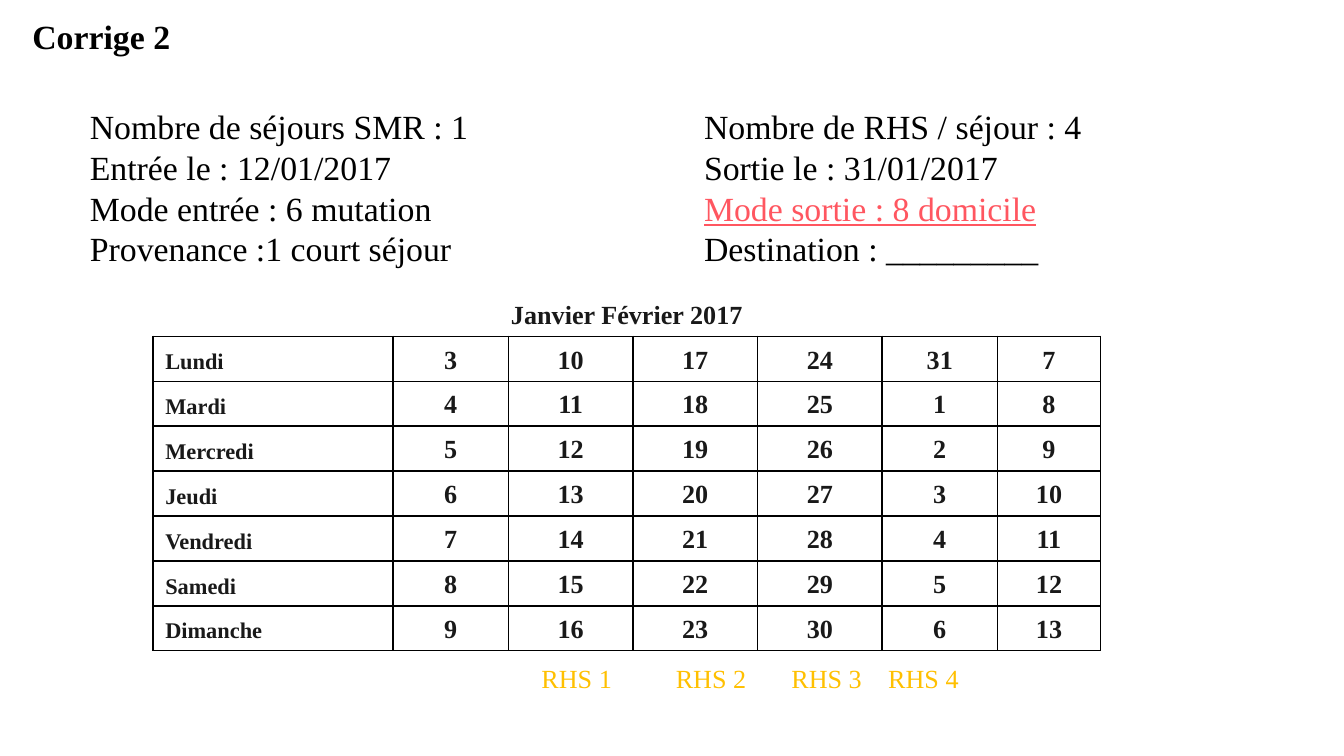
"""Build the corrected exercise slide: stay details and a weekly calendar."""
import pptx
import pptx.util
import pptx.dml.color
import pptx.enum.text
import pptx.oxml
from pptx.oxml.ns import nsdecls, qn

Inches, Pt = pptx.util.Inches, pptx.util.Pt
Align = pptx.enum.text.PP_ALIGN
Anchor = pptx.enum.text.MSO_ANCHOR
Fit = pptx.enum.text.MSO_AUTO_SIZE

FONT = "Times New Roman"
COLORS = {"text": "000000", "alert": "FF5660", "cell": "191919", "week": "FFC000"}

TITLE = "Corrige 2"
ENTRY = [
    "Nombre de séjours SMR : 1",
    "Entrée le : 12/01/2017",
    "Mode entrée : 6 mutation",
    "Provenance :1 court séjour",
]
EXIT = [
    "Nombre de RHS / séjour : 4",
    "Sortie le : 31/01/2017",
    "Mode sortie : 8 domicile",
    "Destination : _________",
]
ALERT = 2
MONTHS = "Janvier Février 2017"
DAYS = ["Lundi", "Mardi", "Mercredi", "Jeudi", "Vendredi", "Samedi", "Dimanche"]
FIRST, LAST = 3, 31
SHARES = [1.79, 0.86, 0.93, 0.93, 0.93, 0.86, 0.77]
WIDTH, ROW = 7.05, 0.33
WEEKS = ["RHS 1", "RHS 2", "RHS 3", "RHS 4"]
STOPS = [1, 1.86, 2.58]
PLAIN = "{2D5ABB26-0587-4C30-8999-92F81FD0307C}"


def style(par, size, color, bold=False):
    font = par.font
    font.name, font.size, font.bold = FONT, Pt(size), bold
    font.color.rgb = pptx.dml.color.RGBColor.from_string(COLORS[color])


def write(shape, box, lines, size, color, bold=False, wrap=True):
    shape.left, shape.top, shape.width, shape.height = map(Inches, box)
    frame = shape.text_frame
    frame.text = "\n".join(lines)
    frame.word_wrap, frame.auto_size = wrap, Fit.SHAPE_TO_FIT_TEXT
    frame.vertical_anchor = Anchor.TOP
    for par in frame.paragraphs:
        par.alignment = Align.LEFT
        style(par, size, color, bold)
    return frame.paragraphs


def add_text(slide, box, *args, **opts):
    return write(slide.shapes.add_textbox(0, 0, 0, 0), box, *args, **opts)


def add_stops(par, stops):
    tabs = "".join(f'<a:tab pos="{Inches(stop)}" algn="l"/>' for stop in stops)
    xml = f'<a:tabLst {nsdecls("a")}>{tabs}</a:tabLst>'
    par._p.get_or_add_pPr().insert(0, pptx.oxml.parse_xml(xml))


def fill_cell(cell, text, size, align, sides):
    cell.text = text
    cell.vertical_anchor = Anchor.BOTTOM
    cell.margin_left = cell.margin_right = Inches(0.09)
    cell.margin_top = cell.margin_bottom = Inches(0.05)
    par = cell.text_frame.paragraphs[0]
    par.alignment = align
    style(par, size, "cell", True)
    for side in sides:
        xml = (f'<a:ln{side} {nsdecls("a")} w="{Pt(1)}"><a:solidFill>'
               f'<a:srgbClr val="{COLORS["text"]}"/></a:solidFill></a:ln{side}>')
        cell._tc.get_or_add_tcPr().append(pptx.oxml.parse_xml(xml))
    cell.fill.background()


def add_dates(slide):
    rows, cols = len(DAYS) + 1, len(SHARES)
    box = map(Inches, (1.14, 2.17, WIDTH, rows * ROW))
    table = slide.shapes.add_table(rows, cols, *box).table
    table.first_row = table.horz_banding = False
    table._tbl.tblPr.find(qn("a:tableStyleId")).text = PLAIN
    for col, share in zip(table.columns, SHARES):
        col.width = Inches(WIDTH * share / sum(SHARES))
    for col in range(cols):
        fill_cell(table.cell(0, col), "" if col else MONTHS, 14, Align.CENTER, "B")
    table.cell(0, 0).merge(table.cell(0, cols - 1))
    for row, day in enumerate(DAYS):
        fill_cell(table.cell(row + 1, 0), day, 12, Align.LEFT, "LRTB")
        for week in range(cols - 1):
            date = (FIRST + row + 7 * week - 1) % LAST + 1
            fill_cell(table.cell(row + 1, week + 1), str(date), 14, Align.CENTER, "LRTB")


def main():
    deck = pptx.Presentation()
    deck.slide_width = Inches(10)
    deck.slide_height = deck.slide_width * 9 // 16
    slide = deck.slides.add_slide(deck.slide_layouts[5])
    write(slide.shapes.title, (0.14, 0.07, 1.24, 0.41), [TITLE], 18.1, "text",
          bold=True, wrap=False)
    add_text(slide, (0.57, 0.74, 3.36, 1.32), ENTRY, 18.1, "text")
    pars = add_text(slide, (5.14, 0.74, 3.1, 1.32), EXIT, 18.1, "text", wrap=False)
    style(pars[ALERT], 18.1, "alert")
    pars[ALERT].font.underline = True
    add_dates(slide)
    pars = add_text(slide, (3.93, 4.88, 3.66, 0.34), ["\t".join(WEEKS)], 14, "week")
    add_stops(pars[0], STOPS)
    deck.save("out.pptx")


if __name__ == "__main__":
    main()
